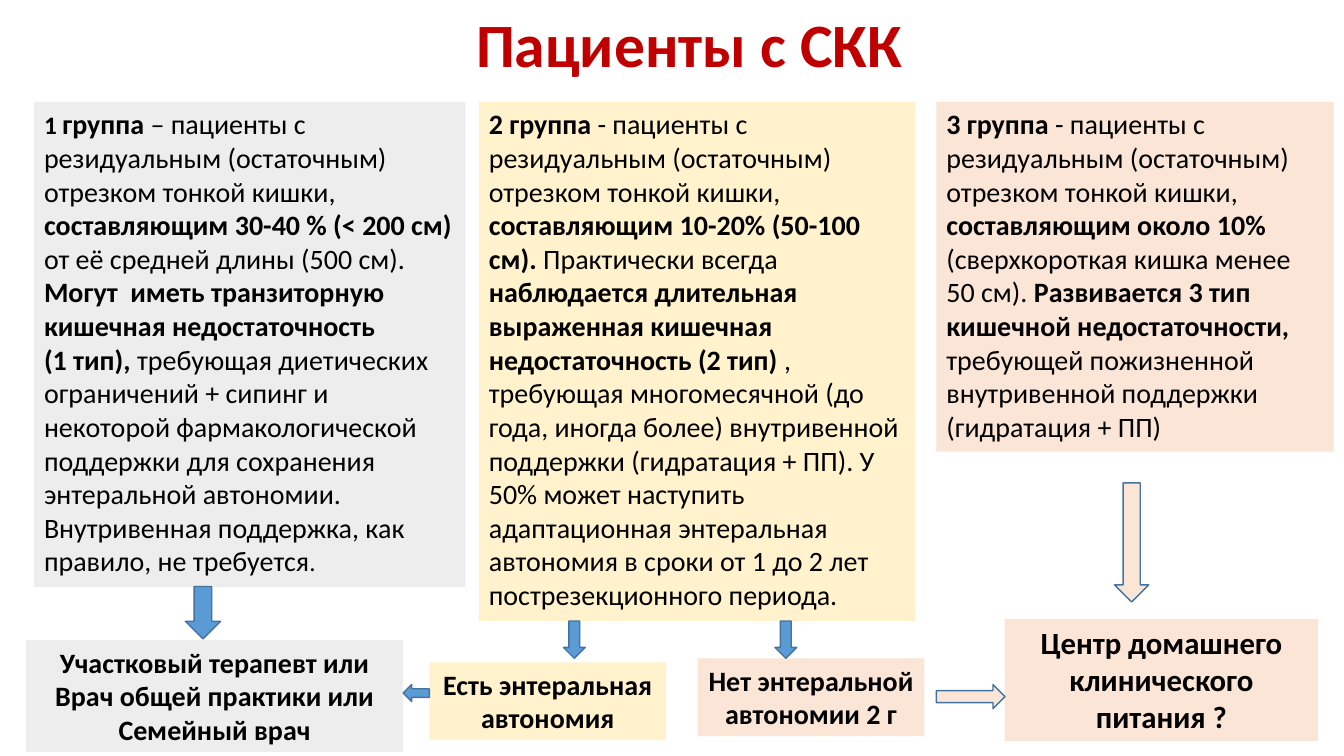
"""Build the slide that routes three patient groups to their care providers."""
from dataclasses import dataclass

from pptx import Presentation
from pptx.dml.color import RGBColor as Rgb
from pptx.enum.shapes import MSO_SHAPE as Shape
from pptx.enum.text import MSO_ANCHOR as Anchor, MSO_AUTO_SIZE as AutoSize, PP_ALIGN as Align
from pptx.util import Cm, Pt


@dataclass(frozen=True)
class Theme:
    font: str = "Calibri"
    title: str = "C00000"
    text: str = "000000"
    gray: str = "EDEDED"
    yellow: str = "FFF2CC"
    peach: str = "FBE5D6"
    blue: str = "5B9BD5"
    outline: str = "43739E"
    title_size: int = 44
    center_size: int = 22
    body_size: int = 20
    small_size: int = 18


def write(paragraph, text, font, size, color, bold=False):
    """Append text to the paragraph, turning newlines into line breaks."""
    for number, line in enumerate(text.split("\n")):
        if number:
            paragraph.add_line_break()
        run = paragraph.add_run()
        run.text = line
        run.font.name, run.font.size, run.font.bold = font, Pt(size), bold
        run.font.color.rgb = Rgb.from_string(color)


class Board:
    """Draws styled elements on the current slide."""

    def __init__(self, slide, theme):
        self.slide, self.theme = slide, theme

    def title(self, text, left, top, width, height):
        heading = self.slide.shapes.title
        heading.left, heading.top = Cm(left), Cm(top)
        heading.width, heading.height = Cm(width), Cm(height)
        frame = heading.text_frame
        frame.auto_size, frame.vertical_anchor = AutoSize.NONE, Anchor.MIDDLE
        paragraph = frame.paragraphs[0]
        paragraph.alignment, paragraph.line_spacing = Align.CENTER, 0.9
        write(paragraph, text, self.theme.font, self.theme.title_size, self.theme.title, bold=True)

    def panel(self, left, top, width, height, fill):
        box = self.slide.shapes.add_textbox(Cm(left), Cm(top), Cm(width), Cm(height))
        box.fill.solid()
        box.fill.fore_color.rgb = Rgb.from_string(fill)
        box.text_frame.word_wrap = True
        box.text_frame.auto_size = AutoSize.SHAPE_TO_FIT_TEXT
        return box.text_frame

    def group(self, left, width, height, fill, pieces):
        paragraph = self.panel(left, 2.57, width, height, fill).paragraphs[0]
        for text, bold, size in pieces:
            write(paragraph, text, self.theme.font, size, self.theme.text, bold=bold)

    def provider(self, left, top, width, height, fill, lines, size):
        frame = self.panel(left, top, width, height, fill)
        for number, line in enumerate(lines):
            paragraph = frame.add_paragraph() if number else frame.paragraphs[0]
            paragraph.alignment = Align.CENTER
            write(paragraph, line, self.theme.font, size, self.theme.text, bold=True)

    def arrow(self, direction, left, top, width, height, fill):
        arrow = self.slide.shapes.add_shape(direction, Cm(left), Cm(top), Cm(width), Cm(height))
        arrow.shadow.inherit = False
        arrow.fill.solid()
        arrow.fill.fore_color.rgb = Rgb.from_string(fill)
        arrow.line.color.rgb = Rgb.from_string(self.theme.outline)
        arrow.line.width = Pt(1)


def main():
    theme = Theme()
    deck = Presentation()
    deck.slide_width, deck.slide_height = Cm(33.87), Cm(19.05)
    board = Board(deck.slides.add_slide(deck.slide_layouts[5]), theme)
    body, small = theme.body_size, theme.small_size
    residual = "пациенты с резидуальным (остаточным) отрезком тонкой кишки, "

    board.title("Пациенты с СКК", 2.77, -0.64, 29.21, 3.68)
    board.group(0.86, 10.87, 12.22, theme.gray, [
        ("1 ", True, small),
        ("группа", True, body),
        (" – " + residual, False, body),
        ("составляющим 30-40 % (< 200 см) ", True, body),
        ("от её средней длины (500 см). ", False, body),
        ("Могут  иметь транзиторную кишечная недостаточность\n(1 тип), ", True, body),
        ("требующая диетических ограничений + сипинг и некоторой фармакологической "
         "поддержки для сохранения энтеральной автономии. Внутривенная поддержка, "
         "как правило, не требуется", False, body),
        (".", False, small),
    ])
    board.group(12.07, 11, 13.08, theme.yellow, [
        ("2 группа ", True, body),
        ("- " + residual, False, body),
        ("составляющим 10-20% (50-100 см). ", True, body),
        ("Практически всегда ", False, body),
        ("наблюдается длительная выраженная кишечная недостаточность (2 тип) ", True, body),
        (", требующая многомесячной (до года, иногда более) внутривенной поддержки "
         "(гидратация + ПП). У 50% может наступить адаптационная энтеральная автономия "
         "в сроки от 1 до 2 лет пострезекционного периода.", False, body),
    ])
    board.group(23.6, 10.01, 8.81, theme.peach, [
        ("3 группа ", True, body),
        ("- " + residual, False, body),
        ("составляющим около 10% ", True, body),
        ("(сверхкороткая кишка менее 50 см). ", False, body),
        ("Развивается 3 тип кишечной недостаточности, ", True, body),
        ("требующей пожизненной внутривенной поддержки (гидратация + ПП)", False, body),
    ])

    board.provider(25.32, 15.6, 7.9, 3.07, theme.peach,
                   ["Центр домашнего клинического питания ?"], theme.center_size)
    board.provider(17.58, 16.59, 5.72, 1.96, theme.peach,
                   ["Нет энтеральной автономии 2 г"], body)
    board.provider(10.82, 16.69, 5.97, 1.96, theme.yellow,
                   ["Есть энтеральная автономия"], body)
    board.provider(0.66, 16.13, 9.5, 2.82, theme.gray,
                   ["Участковый терапевт или", "Врач общей практики или", "Семейный врач"], body)

    board.arrow(Shape.DOWN_ARROW, 28.09, 12.17, 0.86, 3, theme.peach)
    board.arrow(Shape.RIGHT_ARROW, 23.6, 17.25, 1.73, 0.61, theme.peach)
    for left in (14.2, 19.53):
        board.arrow(Shape.DOWN_ARROW, left, 15.65, 0.55, 0.94, theme.blue)
    board.arrow(Shape.DOWN_ARROW, 4.67, 14.78, 0.89, 1.32, theme.blue)
    board.arrow(Shape.LEFT_ARROW, 10.16, 17.25, 0.66, 0.43, theme.blue)
    deck.save("out.pptx")


if __name__ == "__main__":
    main()
